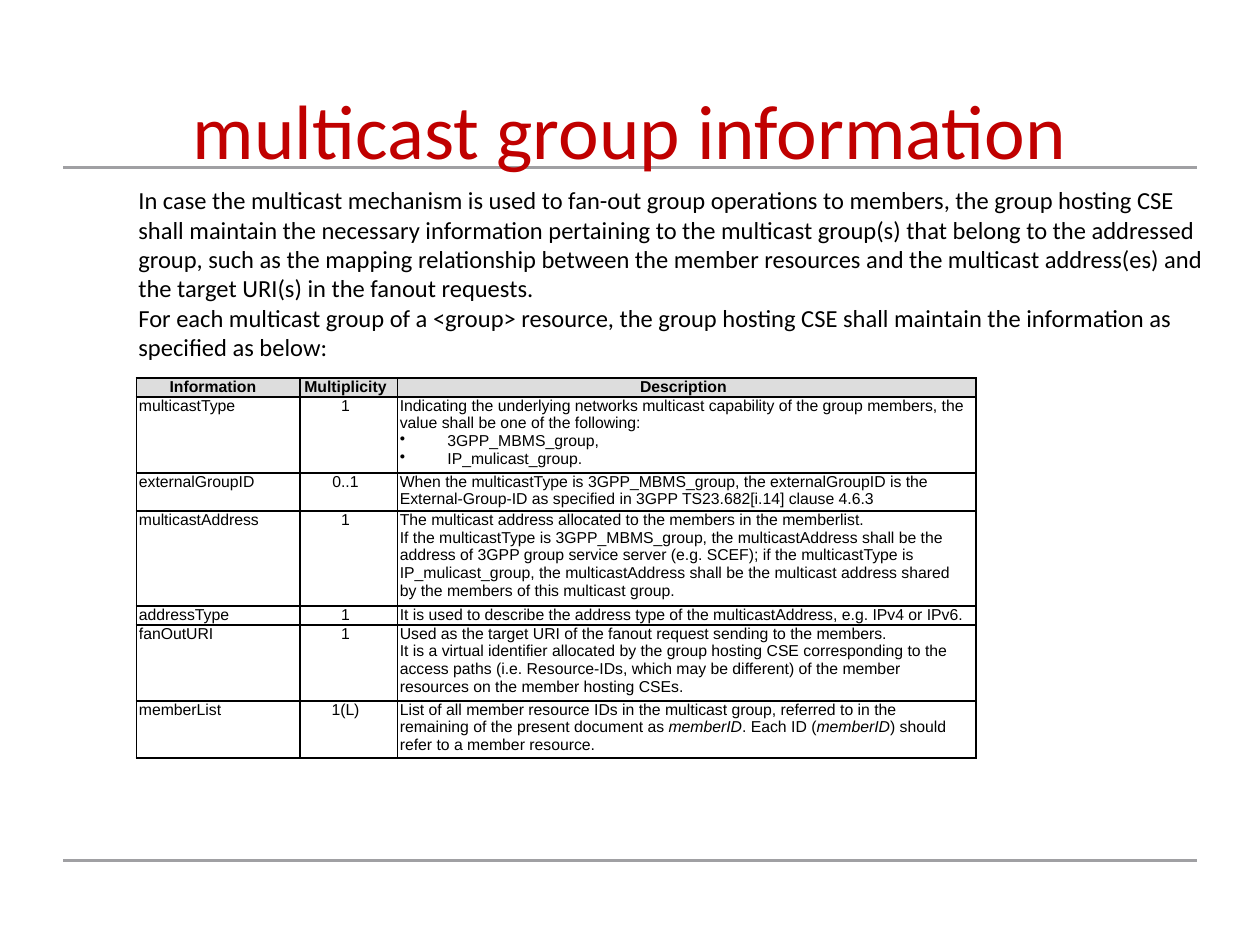
from lxml.etree import SubElement
from pptx import Presentation
from pptx.dml.color import RGBColor
from pptx.enum.shapes import MSO_CONNECTOR as Connector
from pptx.enum.text import MSO_ANCHOR as Anchor, PP_ALIGN as Align
from pptx.oxml.ns import qn
from pptx.util import Cm, Pt


def color(value):
    return RGBColor.from_string(value)


def add_span(para, text, font, size, ink="000000", bold=False, italic=False):
    span = para.add_run()
    span.text = text
    span.font.name = font
    span.font.size = Pt(size)
    span.font.color.rgb = color(ink)
    span.font.bold = bold
    span.font.italic = italic


deck = Presentation()
deck.slide_width, deck.slide_height = Cm(25.4), Cm(19.05)
page = deck.slides.add_slide(deck.slide_layouts[5])

# Rules above and below the content
for y in (3.38, 17.35):
    rule = page.shapes.add_connector(
        Connector.STRAIGHT, Cm(1.27), Cm(y), Cm(24.13), Cm(y))
    rule.line.color.rgb = color("A0A0A3")
    rule.line.width = Pt(1.75)
    SubElement(rule._element.spPr, qn("a:effectLst"))

# Title, brought in front of the rules
title = page.shapes.title
title.left, title.top, title.width, title.height = Cm(1.27), Cm(1.47), Cm(22.86), Cm(3.18)
title.text_frame.vertical_anchor = Anchor.TOP
title.text_frame.margin_top = Cm(0.2)
para = title.text_frame.paragraphs[0]
para.alignment = Align.CENTER
add_span(para, "multicast group information", "Calibri", 44, "C00000")
page.shapes._spTree.append(title._element)

# Introduction
intro = [
    "In case the multicast mechanism is used to fan-out group operations to members, "
    "the group hosting CSE shall maintain the necessary information pertaining to the "
    "multicast group(s) that belong to the addressed group, such as the mapping "
    "relationship between the member resources and the multicast address(es) and the "
    "target URI(s) in the fanout requests.",
    "For each multicast group of a <group> resource, the group hosting CSE shall "
    "maintain the information as specified as below:",
]
box = page.shapes.add_textbox(Cm(2.54), Cm(3.61), Cm(22.4), Cm(3.84))
box.text_frame.word_wrap = True
for index, text in enumerate(intro):
    para = box.text_frame.add_paragraph() if index else box.text_frame.paragraphs[0]
    add_span(para, text, "Calibri", 14)

# Table: each description is a list of paragraphs; "•" marks a bullet,
# and "_" + "|" splitting alternates upright and italic text
rows = [
    ("Information ", "Multiplicity", ["Description"]),
    ("multicastType", "1", [
        "Indicating the underlying networks multicast capability of the group members, "
        "the value shall be one of the following:",
        "•3GPP_MBMS_group,",
        "•IP_mulicast_group."]),
    ("externalGroupID", "0..1", [
        "When the multicastType is 3GPP_MBMS_group, the externalGroupID is the "
        "External-Group-ID as specified in 3GPP TS23.682[i.14] clause 4.6.3"]),
    ("multicastAddress", "1", [
        "The multicast address allocated to the members in the memberlist.",
        "If the multicastType is 3GPP_MBMS_group, the multicastAddress shall be the "
        "address of 3GPP group service server (e.g. SCEF); if the multicastType is "
        "IP_mulicast_group, the multicastAddress shall be the multicast address shared "
        "by the members of this multicast group."]),
    ("addressType", "1", [
        "It is used to describe the address type of the multicastAddress, "
        "e.g. IPv4 or IPv6."]),
    ("fanOutURI", "1", [
        "Used as the target URI of the fanout request sending to the members.",
        "It is a virtual identifier allocated by the group hosting CSE corresponding to "
        "the access paths (i.e. Resource-IDs, which may be different) of the member "
        "resources on the member hosting CSEs."]),
    ("memberList", "1(L)", [
        "List of all member resource IDs in the multicast group, referred to in the "
        "remaining of the present document as |memberID|. Each ID (|memberID|) should "
        "refer to a member resource."]),
]
widths = [3.3, 1.96, 11.66]
heights = [0.38, 1.53, 0.77, 1.9, 0.38, 1.53, 1.15]
table = page.shapes.add_table(
    len(rows), len(widths), Cm(2.75), Cm(7.62), Cm(sum(widths)), Cm(sum(heights))).table
table.first_row = table.horz_banding = False
for column, width in zip(table.columns, widths):
    column.width = Cm(width)
for row, height in zip(table.rows, heights):
    row.height = Cm(height)

for r, (name, multiplicity, description) in enumerate(rows):
    header = r == 0
    for c, texts in enumerate(([name], [multiplicity], description)):
        cell = table.cell(r, c)
        cell.margin_left, cell.margin_right = Cm(0.05), Cm(0.18)
        cell.margin_top = cell.margin_bottom = Cm(0)
        cell.vertical_anchor = Anchor.MIDDLE if header else Anchor.TOP

        for side in ("lnL", "lnR", "lnT", "lnB"):
            border = SubElement(cell._tc.get_or_add_tcPr(), qn(f"a:{side}"), w=str(Pt(1)))
            SubElement(SubElement(border, qn("a:solidFill")), qn("a:srgbClr"), val="000000")
        if header:
            cell.fill.solid()
            cell.fill.fore_color.rgb = color("DDDDDD")
        else:
            cell.fill.background()

        for index, text in enumerate(texts):
            para = cell.text_frame.add_paragraph() if index else cell.text_frame.paragraphs[0]
            para.alignment = Align.CENTER if header or c == 1 else Align.LEFT
            if text.startswith("•"):
                properties = para._p.get_or_add_pPr()
                properties.set("marL", str(Cm(0.96)))
                properties.set("indent", str(-Cm(0.96)))
                SubElement(properties, qn("a:buChar"), char="•")
            for part, words in enumerate(text.lstrip("•").split("|")):
                add_span(para, words, "Arial", 9, bold=header, italic=part % 2 == 1)

deck.save("out.pptx")
